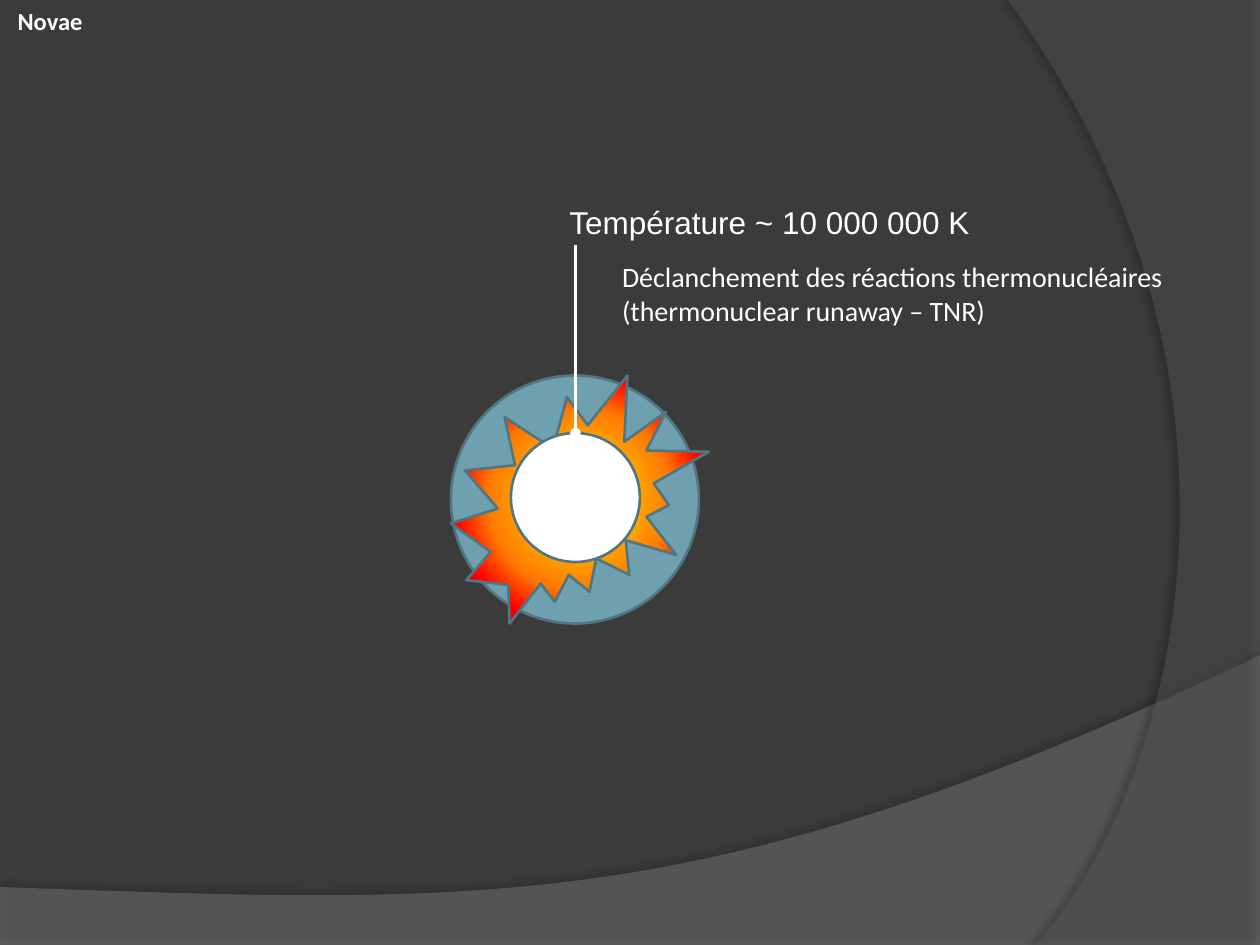
from lxml import etree
from pptx import Presentation
from pptx.dml.color import RGBColor
from pptx.enum.shapes import MSO_CONNECTOR, MSO_SHAPE
from pptx.enum.text import MSO_ANCHOR, MSO_AUTO_SIZE, PP_ALIGN
from pptx.oxml import parse_xml
from pptx.oxml.ns import nsdecls, qn
from pptx.util import Cm, Pt

HUE = {"back": "3B3B3B", "wave": "7F7F7F", "arc": "5E5E5E", "shell": "6EA0B0",
       "edge": "517682", "white": "FFFFFF", "black": "000000"}
BLAST = [(0, "FFF200"), (51, "FF7A00"), (70, "FF0300"), (100, "4D0808")]


def rgb(name):
    return RGBColor.from_string(HUE[name])


def curve(start, one, two, end, steps=60):
    """Points along a cubic curve, without its start."""
    pts = []
    for i in range(1, steps + 1):
        t = i / steps
        u = 1 - t
        pts.append(tuple(u**3 * a + 3 * u * u * t * b + 3 * u * t * t * c + t**3 * d
                         for a, b, c, d in zip(start, one, two, end)))
    return pts


def draw_sweep(slide, box, lines, bend, hue, alpha, shade):
    """Translucent area: straight edges, then a bend; points are shares of the box."""
    left, top, wide, high = box
    pts = [(Cm(left + x * wide), Cm(top + y * high))
           for x, y in lines + curve(lines[-1], *bend)]
    pen = slide.shapes.build_freeform(*pts[0], scale=1.0)
    pen.add_line_segments(pts[1:], close=True)
    area = pen.convert_to_shape()
    area.fill.solid()
    area.fill.fore_color.rgb = rgb(hue)
    area.line.fill.background()
    tint = area._element.spPr.find(qn("a:solidFill"))[0]
    etree.SubElement(tint, qn("a:alpha"), val=str(alpha * 1000))
    dark, blur, dist, turn = shade
    area._element.spPr.append(parse_xml(
        f'<a:effectLst {nsdecls("a")}><a:outerShdw blurRad="{Pt(blur)}" '
        f'dist="{Pt(dist)}" dir="{turn * 60000}" algn="ctr" rotWithShape="0">'
        f'<a:srgbClr val="{HUE["black"]}"><a:alpha val="{dark * 1000}"/>'
        '</a:srgbClr></a:outerShdw></a:effectLst>'))


def draw_back(slide, wide, high):
    slide.background.fill.solid()
    slide.background.fill.fore_color.rgb = rgb("back")
    top, left = 13.21, 20.32
    draw_sweep(slide, (0, top, wide, high - top),
               [(0, 0.8), (0, 1), (1, 1), (1, 0)],
               [(0.56, 0.91), (0.39, 0.86), (0, 0.8)], "wave", 45, (35, 4, 3.5, 270))
    draw_sweep(slide, (left, 0, wide - left, high),
               [(1, 0), (1, 1), (0.11, 1)],
               [(0.68, 0.83), (1.09, 0.4), (0, 0)], "arc", 40, (45, 4, 4, 180))


def add_part(slide, kind, box, hue=None):
    part = slide.shapes.add_shape(kind, *map(Cm, box))
    part.shadow.inherit = False
    if hue:
        part.fill.solid()
        part.fill.fore_color.rgb = rgb(hue)
    part.line.color.rgb = rgb("edge")
    part.line.width = Pt(1.5)
    return part


def fill_blast(shape):
    """Radial gradient from the centre outwards."""
    stops = "".join(f'<a:gs pos="{pos * 1000}"><a:srgbClr val="{hue}"/></a:gs>'
                    for pos, hue in BLAST)
    shape._element.spPr.find(qn("a:prstGeom")).addnext(parse_xml(
        f'<a:gradFill {nsdecls("a")} rotWithShape="1"><a:gsLst>{stops}</a:gsLst>'
        '<a:path path="circle"><a:fillToRect l="50000" t="50000" r="50000" b="50000"/>'
        '</a:path></a:gradFill>'))


def draw_star(slide, box):
    """Shell, blast and core; gives back the core."""
    left, top, size = box
    add_part(slide, MSO_SHAPE.OVAL, (left, top, size, size), "shell")
    fill_blast(add_part(slide, MSO_SHAPE.EXPLOSION2, (left, top, size + 0.2, size)))
    return add_part(slide, MSO_SHAPE.OVAL, (left + 1.21, top + 1.16, 2.6, 2.6), "white")


def set_font(para, face, size, bold=False):
    para.font.name = face
    para.font.size = Pt(size)
    para.font.bold = bold
    para.font.color.rgb = rgb("white")


def draw_title(slide, box, text):
    title = slide.shapes.title
    title.left, title.top, title.width, title.height = map(Cm, box)
    frame = title.text_frame
    frame.text = text
    frame.auto_size = MSO_AUTO_SIZE.NONE
    frame.vertical_anchor = MSO_ANCHOR.TOP
    para = frame.paragraphs[0]
    para.alignment = PP_ALIGN.LEFT
    props = para._p.get_or_add_pPr()
    props.set("marL", str(Cm(0.1)))
    props.set("indent", "0")
    set_font(para, "Calibri", 14, True)


def draw_note(slide, box, lines, face, size):
    frame = slide.shapes.add_textbox(*map(Cm, box)).text_frame
    frame.word_wrap = False
    frame.auto_size = MSO_AUTO_SIZE.SHAPE_TO_FIT_TEXT
    frame.text = "\n".join(lines)
    for para in frame.paragraphs:
        set_font(para, face, size)


def draw_lead(slide, start, core):
    """Pointer from a start point to the top of the core."""
    x, y = map(Cm, start)
    lead = slide.shapes.add_connector(MSO_CONNECTOR.STRAIGHT, x, y, x, core.top)
    lead.end_connect(core, 0)
    lead.line.color.rgb = rgb("white")
    lead.line.width = Pt(2)
    etree.SubElement(lead.line._get_or_add_ln(), qn("a:tailEnd"), type="oval")
    etree.SubElement(lead._element.spPr, qn("a:effectLst"))


def main():
    deck = Presentation()
    wide, high = 25.4, 19.05
    deck.slide_width, deck.slide_height = Cm(wide), Cm(high)
    slide = deck.slides.add_slide(deck.slide_layouts[5])
    draw_back(slide, wide, high)
    core = draw_star(slide, (9.09, 7.57, 5))
    draw_title(slide, (0, 0, 2.31, 0.64), "Novae")
    draw_note(slide, (11.23, 3.96, 8.84, 1.02),
              ["Température ~ 10 000 000 K"], "Arial", 18)
    draw_note(slide, (12.29, 5.11, 11.56, 1.63),
              ["Déclanchement des réactions thermonucléaires",
               "(thermonuclear runaway – TNR)"], "Calibri", 16)
    draw_lead(slide, (11.6, 4.93), core)
    deck.save("out.pptx")


if __name__ == "__main__":
    main()
